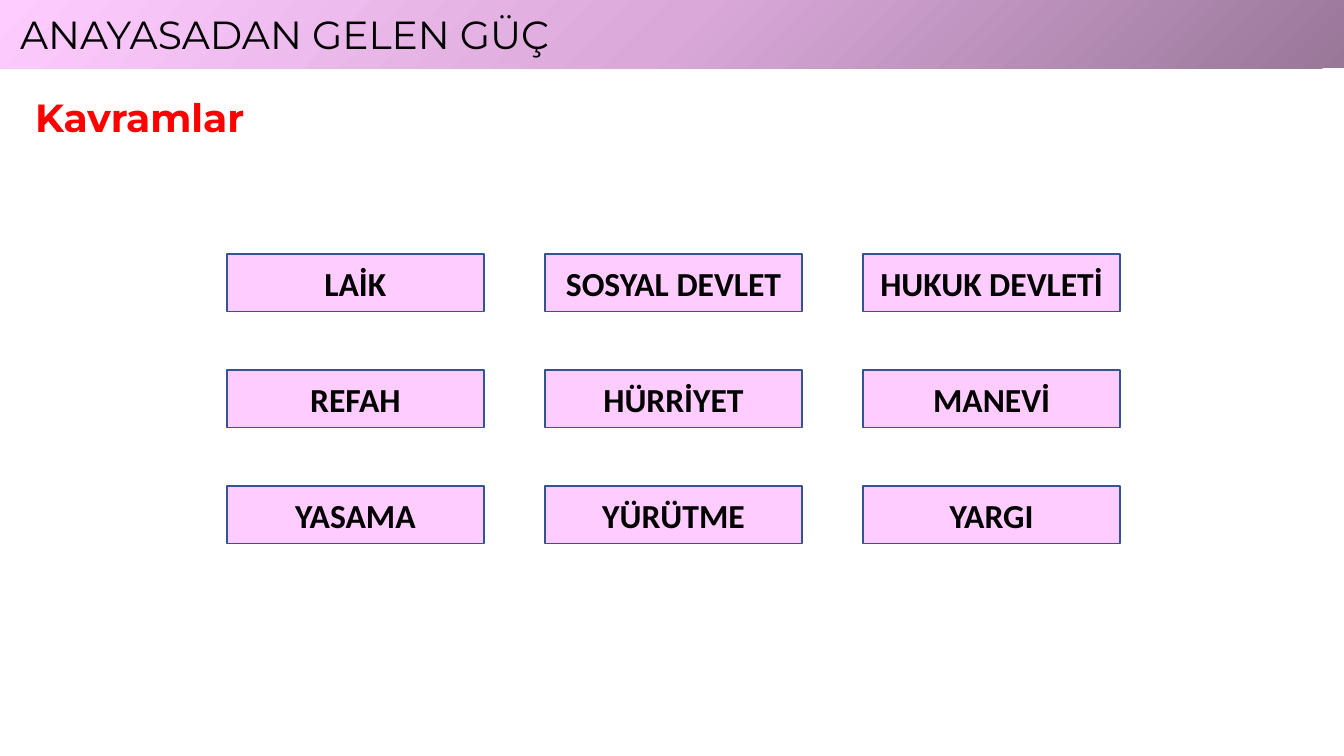
"""Build the "Kavramlar" slide: a gradient title bar over a grid of nine concepts."""
from copy import deepcopy

from pptx import Presentation
from pptx.dml.color import RGBColor
from pptx.enum.shapes import MSO_SHAPE
from pptx.enum.text import MSO_ANCHOR, MSO_AUTO_SIZE, PP_ALIGN
from pptx.oxml.ns import qn
from pptx.util import Inches, Pt


def color(value):
    return RGBColor.from_string(value)


def write(shape, text, align, ink="000000", **font_format):
    paragraph = shape.text_frame.paragraphs[0]
    paragraph.alignment = align
    run = paragraph.add_run()
    run.text = text
    run.font.color.rgb = color(ink)
    for name, value in font_format.items():
        setattr(run.font, name, value)


deck = Presentation()
deck.slide_width, deck.slide_height = Inches(13.33), Inches(7.5)
slide = deck.slides.add_slide(deck.slide_layouts[6])
shapes = slide.shapes

heading = shapes.add_textbox(Inches(0.25), Inches(0.88), Inches(2.42), Inches(0.57))
heading.text_frame.word_wrap = False
heading.text_frame.auto_size = MSO_AUTO_SIZE.SHAPE_TO_FIT_TEXT
write(heading, "Kavramlar", PP_ALIGN.LEFT, "FF0000",
      name="Montserrat", size=Pt(28), bold=True)

title_bar = shapes.add_shape(MSO_SHAPE.RECTANGLE, 0, 0, deck.slide_width, Inches(0.68))
title_bar.shadow.inherit = False
title_bar.line.fill.background()
title_bar.fill.gradient()
title_bar.fill.gradient_angle = 135
stop_list = title_bar._element.spPr.find(".//" + qn("a:gsLst"))
stop_list.append(deepcopy(stop_list[0]))
shades = [(0, "997799"), (0.5, "DAA9DA"), (1, "FFCCFF")]
for stop, (position, shade) in zip(title_bar.fill.gradient_stops, shades):
    stop.position = position
    stop.color.rgb = color(shade)
title_bar.text_frame.margin_left = Inches(0.2)
title_bar.text_frame.vertical_anchor = MSO_ANCHOR.MIDDLE
write(title_bar, "ANAYASADAN GELEN GÜÇ", PP_ALIGN.LEFT,
      name="Montserrat", size=Pt(28), bold=False)

concepts = [
    ["LAİK", "SOSYAL DEVLET", "HUKUK DEVLETİ"],
    ["REFAH", "HÜRRİYET", "MANEVİ"],
    ["YASAMA", "YÜRÜTME", "YARGI"],
]
for row, concept_row in enumerate(concepts):
    for column, concept in enumerate(concept_row):
        box = shapes.add_shape(
            MSO_SHAPE.RECTANGLE,
            Inches(2.25 + 3.155 * column), Inches(2.52 + 1.15 * row),
            Inches(2.55), Inches(0.57))
        box.shadow.inherit = False
        box.fill.solid()
        box.fill.fore_color.rgb = color("FFCCFF")
        box.line.color.rgb = color("325491")
        box.line.width = Pt(1)
        box.text_frame.vertical_anchor = MSO_ANCHOR.MIDDLE
        write(box, concept, PP_ALIGN.CENTER, name="Calibri", size=Pt(24), bold=True)

deck.save("out.pptx")
